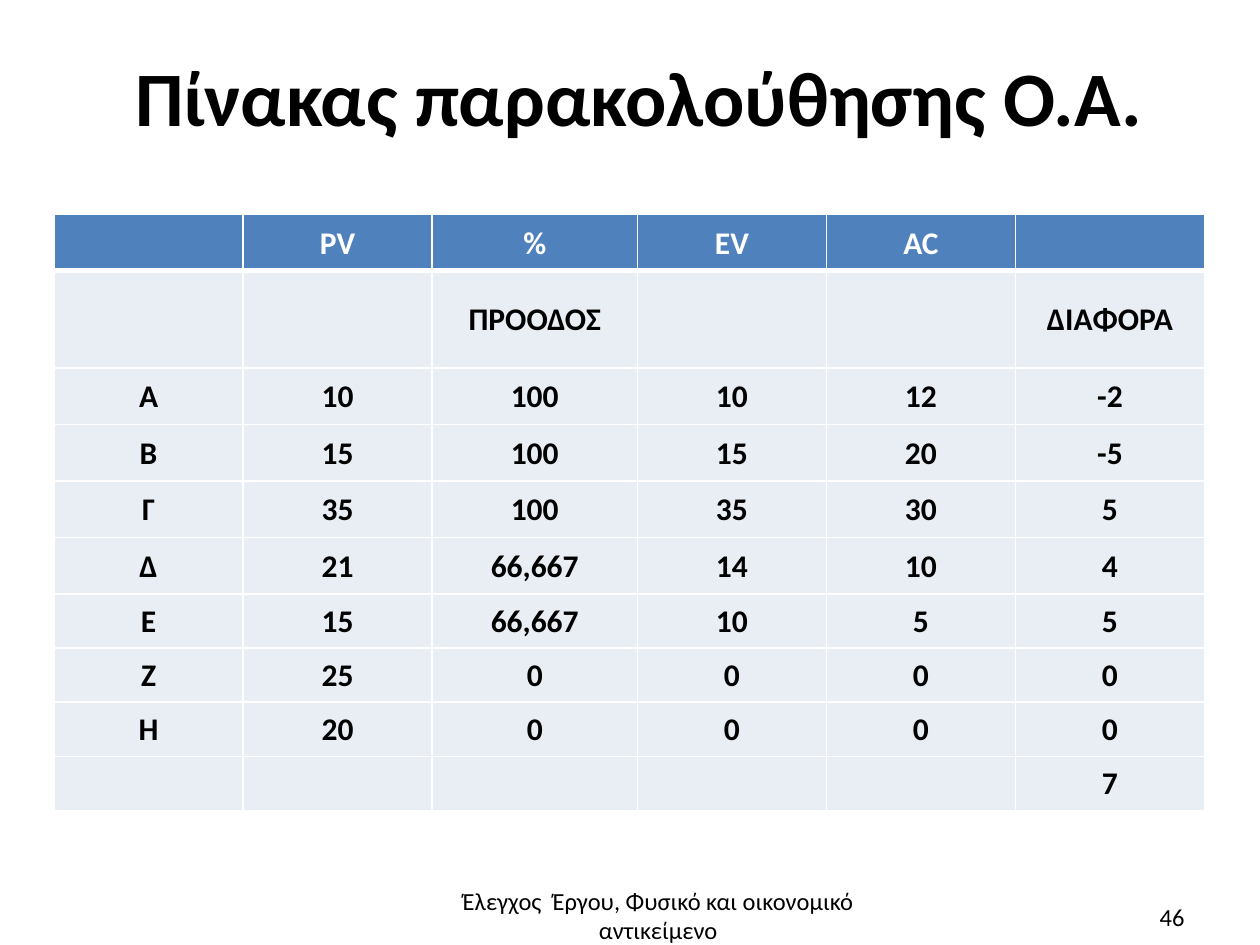
from lxml.etree import SubElement
from pptx import Presentation
from pptx.dml.color import RGBColor
from pptx.enum.text import MSO_ANCHOR, PP_ALIGN
from pptx.oxml.ns import qn
from pptx.util import Cm, Pt

FONT = "Calibri"
BLACK, WHITE = "000000", "FFFFFF"
HEADER_FILL, BODY_FILL = "4F81BD", "E9EDF4"

COLUMN_WIDTHS = [3.81, 3.81, 4.14, 3.81, 3.81, 3.81]
ROW_HEIGHTS = [1.14, 1.96] + [1.14] * 4 + [1.09] * 4
ROWS = [
    ["", "PV", "%", "EV", "AC", ""],
    ["", "", "ΠΡΟΟΔΟΣ", "", "", "ΔΙΑΦΟΡΑ"],
    ["Α", "10", "100", "10", "12", "-2"],
    ["Β", "15", "100", "15", "20", "-5"],
    ["Γ", "35", "100", "35", "30", "5"],
    ["Δ", "21", "66,667", "14", "10", "4"],
    ["Ε", "15", "66,667", "10", "5", "5"],
    ["Ζ", "25", "0", "0", "0", "0"],
    ["Η", "20", "0", "0", "0", "0"],
    ["", "", "", "", "", "7"],
]


def color(hex_string):
    return RGBColor.from_string(hex_string)


def add_run(paragraph, text, size, hex_color=BLACK, bold=False):
    run = paragraph.add_run()
    run.text = text
    run.font.name = FONT
    run.font.size = Pt(size)
    run.font.bold = bold
    run.font.color.rgb = color(hex_color)


def place(shape, left, top, width, height):
    shape.left, shape.top = Cm(left), Cm(top)
    shape.width, shape.height = Cm(width), Cm(height)


def set_title(slide, text):
    title = slide.shapes.title
    place(title, 1.3, 0.23, 23.19, 3.5)
    frame = title.text_frame
    frame.vertical_anchor = MSO_ANCHOR.MIDDLE
    frame.margin_left = frame.margin_right = frame.margin_bottom = 0
    frame.margin_top = Cm(0.05)
    paragraph = frame.paragraphs[0]
    paragraph.alignment = PP_ALIGN.CENTER
    paragraph.line_spacing = 0.98
    add_run(paragraph, text, 44, bold=True)


def add_label(slide, text, left, top, width, height, alignment):
    box = slide.shapes.add_textbox(Cm(left), Cm(top), Cm(width), Cm(height))
    box.text_frame.word_wrap = True
    paragraph = box.text_frame.paragraphs[0]
    paragraph.alignment = alignment
    add_run(paragraph, text, 14)


def set_borders(cell, top, bottom):
    properties = cell._tc.get_or_add_tcPr()
    for side, points in (("L", 1), ("R", 1), ("T", top), ("B", bottom)):
        line = SubElement(properties, qn(f"a:ln{side}"), w=str(Pt(points)))
        fill = SubElement(line, qn("a:solidFill"))
        SubElement(fill, qn("a:srgbClr"), val=WHITE)


def format_cell(cell, text, row_index):
    is_header = row_index == 0
    # A thick rule separates the header from the body
    set_borders(cell, 3 if row_index == 1 else 1, 3 if is_header else 1)
    cell.fill.solid()
    cell.fill.fore_color.rgb = color(HEADER_FILL if is_header else BODY_FILL)
    cell.vertical_anchor = MSO_ANCHOR.MIDDLE
    cell.margin_left = cell.margin_right = cell.margin_top = Cm(0.03)
    cell.margin_bottom = 0
    paragraph = cell.text_frame.paragraphs[0]
    paragraph.alignment = PP_ALIGN.CENTER
    if text:
        add_run(paragraph, text, 18, WHITE if is_header else BLACK, bold=True)


def add_tracking_table(slide):
    table = slide.shapes.add_table(
        len(ROWS), len(COLUMN_WIDTHS), Cm(1.09), Cm(4.32),
        Cm(sum(COLUMN_WIDTHS)), Cm(sum(ROW_HEIGHTS))).table
    for column, width in zip(table.columns, COLUMN_WIDTHS):
        column.width = Cm(width)
    for row_index, values in enumerate(ROWS):
        table.rows[row_index].height = Cm(ROW_HEIGHTS[row_index])
        for column_index, text in enumerate(values):
            format_cell(table.cell(row_index, column_index), text, row_index)


def main():
    presentation = Presentation()
    presentation.slide_width, presentation.slide_height = Cm(25.4), Cm(19.05)
    slide = presentation.slides.add_slide(presentation.slide_layouts[5])

    set_title(slide, "Πίνακας παρακολούθησης Ο.Α.")
    add_tracking_table(slide)

    # Footer and slide number
    add_label(slide, "Έλεγχος  Έργου, Φυσικό και οικονομικό αντικείμενο",
              8.84, 17.73, 8.86, 1.4, PP_ALIGN.CENTER)
    add_label(slide, "46", 18.21, 18.06, 5.92, 1.02, PP_ALIGN.RIGHT)

    presentation.save("out.pptx")


if __name__ == "__main__":
    main()
